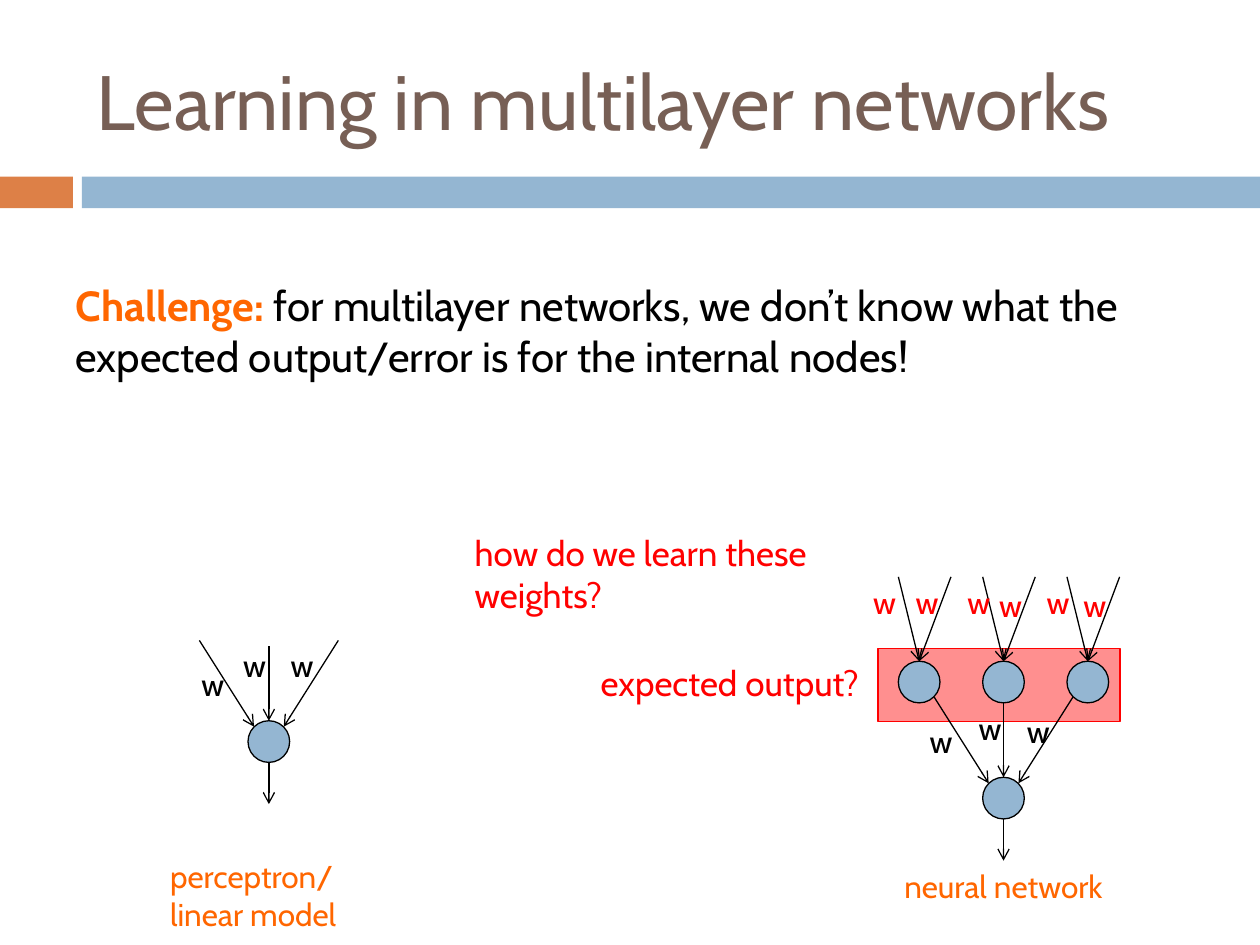
"""Builds the slide on learning in multilayer networks."""
from dataclasses import dataclass

from lxml.etree import SubElement
from pptx import Presentation
from pptx.dml.color import RGBColor
from pptx.enum.shapes import MSO_CONNECTOR, MSO_SHAPE
from pptx.enum.text import MSO_ANCHOR, MSO_AUTO_SIZE, PP_ALIGN
from pptx.oxml.ns import qn
from pptx.util import Cm, Pt


@dataclass(frozen=True)
class Theme:
    font: str = "Cabin"
    brown: str = "775F55"
    accent: str = "DD8047"
    blue: str = "94B6D2"
    orange: str = "FF6600"
    red: str = "FF0000"
    black: str = "000000"
    title: int = 44
    body: int = 24
    question: int = 20
    label: int = 18
    line: float = 0.75


theme = Theme()


def write(paragraph, text, color, size, bold=False):
    first_new = len(paragraph.runs)
    for position, line in enumerate(text.split("\n")):
        if position:
            paragraph.add_line_break()
        paragraph.add_run().text = line
    font_format = {"name": theme.font, "size": Pt(size), "bold": bold}
    for run in paragraph.runs[first_new:]:
        for attribute, value in font_format.items():
            setattr(run.font, attribute, value)
        run.font.color.rgb = RGBColor.from_string(color)


def add_block(kind, box, fill, outline=None):
    block = slide.shapes.add_shape(kind, *map(Cm, box))
    block.shadow.inherit = False
    block.fill.solid()
    block.fill.fore_color.rgb = RGBColor.from_string(fill)
    if outline:
        block.line.color.rgb = RGBColor.from_string(outline)
        block.line.width = Pt(theme.line)
    else:
        block.line.fill.background()
    return block


presentation = Presentation()
presentation.slide_width, presentation.slide_height = Cm(25.4), Cm(19.05)
slide = presentation.slides.add_slide(presentation.slide_layouts[1])

heading, challenge = slide.placeholders
placements = [
    (heading, (1.7, 0.64, 22.66, 2.74), MSO_ANCHOR.MIDDLE),
    (challenge, (1.27, 5.51, 22.86, 3.18), MSO_ANCHOR.TOP),
]
for placeholder, box, anchor in placements:
    for side, value in zip(("left", "top", "width", "height"), box):
        setattr(placeholder, side, Cm(value))
    frame_format = {"vertical_anchor": anchor, "word_wrap": True, "auto_size": MSO_AUTO_SIZE.NONE}
    for attribute, value in frame_format.items():
        setattr(placeholder.text_frame, attribute, value)
    placeholder.text_frame.paragraphs[0].alignment = PP_ALIGN.LEFT

write(heading.text_frame.paragraphs[0], "Learning in multilayer networks", theme.brown, theme.title)
statement = challenge.text_frame.paragraphs[0]
statement.space_before = Pt(7)
write(statement, "Challenge:", theme.orange, theme.body, bold=True)
write(
    statement,
    " for multilayer networks, we don’t know what the expected output/error is for the internal nodes!",
    theme.black,
    theme.body,
)
statement_properties = statement._p.get_or_add_pPr()
for attribute in ("marL", "indent"):
    statement_properties.set(attribute, "0")
SubElement(statement_properties, qn("a:buNone"))

add_block(MSO_SHAPE.RECTANGLE, (0, 3.56, 1.47, 0.64), theme.accent)
add_block(MSO_SHAPE.RECTANGLE, (1.65, 3.56, 23.75, 0.64), theme.blue)
hidden_layer = add_block(MSO_SHAPE.RECTANGLE, (17.7, 13.08, 4.88, 1.47), theme.red, theme.red)
layer_color = hidden_layer.fill._xPr.find(qn("a:solidFill"))[0]
SubElement(layer_color, qn("a:alpha"), val="44000")

radius = 0.42
perceptron, network_output = (5.42, 14.95), (20.23, 16.09)
hidden_nodes = [(20.23 + column * 1.7, 13.75) for column in (-1, 0, 1)]
output_links = [
    (-1.4, -2.04, -0.3, -0.3),
    (0, -1.92, 0, -radius),
    (1.4, -2.04, 0.3, -0.3),
    (0, radius, 0, 1.26),
]
hidden_links = [(-0.42, -2.12, 0, -radius), (0.64, -2.12, 0, -radius)]
neurons = [(perceptron, output_links), (network_output, output_links)]
neurons += [(node, hidden_links) for node in hidden_nodes]

for (x, y), links in neurons:
    add_block(MSO_SHAPE.OVAL, (x - radius, y - radius, 2 * radius, 2 * radius), theme.blue, theme.black)
    for start_x, start_y, end_x, end_y in links:
        ends = (x + start_x, y + start_y, x + end_x, y + end_y)
        link = slide.shapes.add_connector(MSO_CONNECTOR.STRAIGHT, *map(Cm, ends))
        link.line.color.rgb = RGBColor.from_string(theme.black)
        link.line.width = Pt(theme.line)
        SubElement(link.line._get_or_add_ln(), qn("a:tailEnd"), type="arrow")
        SubElement(link._element.spPr, qn("a:effectLst"))

captions = [
    ("expected output?", (11.86, 13.21, 7.62, 1.12), theme.red, theme.question, True),
    ("how do we learn these weights?", (9.32, 10.59, 9.91, 1.12), theme.red, theme.question, True),
    ("perceptron/\nlinear model", (3.18, 17.15, 5.72, 1.8), theme.orange, theme.label, True),
    ("neural network", (17.98, 17.35, 5.79, 1.02), theme.orange, theme.label, True),
]
weights = {
    theme.black: [
        (3.81, 13.28), (4.65, 12.9), (5.61, 12.9),
        (18.49, 14.43), (19.48, 14.17), (20.45, 14.22),
    ],
    theme.red: [
        (17.35, 11.63), (18.21, 11.63), (19.25, 11.63),
        (19.89, 11.68), (20.85, 11.63), (21.59, 11.68),
    ],
}
for color, corners in weights.items():
    captions += [("w", (x, y, 0.94, 1.02), color, theme.label, False) for x, y in corners]

for text, box, color, size, wrap in captions:
    caption = slide.shapes.add_textbox(*map(Cm, box)).text_frame
    for attribute, value in {"word_wrap": wrap, "auto_size": MSO_AUTO_SIZE.SHAPE_TO_FIT_TEXT}.items():
        setattr(caption, attribute, value)
    write(caption.paragraphs[0], text, color, size)

presentation.save("out.pptx")
